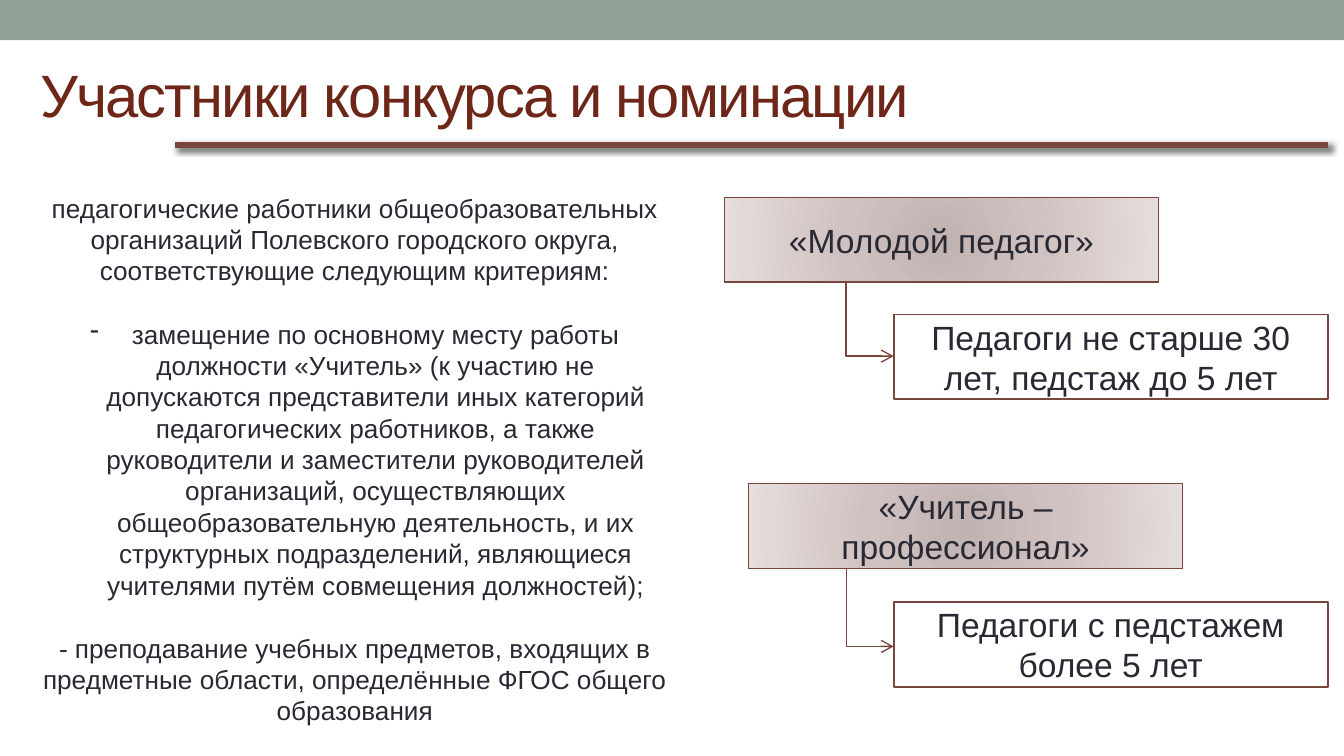
from dataclasses import dataclass

from lxml import etree
from pptx import Presentation
from pptx.dml.color import RGBColor
from pptx.enum.shapes import MSO_CONNECTOR as Conn, MSO_SHAPE as Shape
from pptx.enum.text import MSO_ANCHOR as Anchor, PP_ALIGN as Align
from pptx.oxml import parse_xml
from pptx.oxml.ns import nsdecls, qn
from pptx.util import Inches, Pt


@dataclass(frozen=True)
class Theme:
    font: str = "Arial"
    band: str = "93A299"
    title: str = "6E2619"
    line: str = "79463D"
    ink: str = "292934"
    paper: str = "FFFFFF"
    glow: tuple = ((0, "C0B3B1"), (45, "D0C2C0"), (100, "E5DEDD"))
    big: int = 32
    mid: int = 18
    small: int = 14


T = Theme()
WIDE = 10
BOX_W, BOX_H = 3.23, 0.63
INTRO = ("педагогические работники общеобразовательных организаций Полевского "
         "городского округа, соответствующие следующим критериям:")
POST = ("замещение по основному месту работы должности «Учитель» (к участию не "
        "допускаются представители иных категорий педагогических работников, а также "
        "руководители и заместители руководителей организаций, осуществляющих "
        "общеобразовательную деятельность, и их структурных подразделений, "
        "являющиеся учителями путём совмещения должностей);")
FIELD = ("- преподавание учебных предметов, входящих в предметные области, "
         "определённые ФГОС общего образования")


def rgb(code):
    return RGBColor.from_string(code)


def write(frame, text, size=T.small, color=T.ink, align=Align.CENTER,
          anchor=Anchor.MIDDLE, gap=0, track=0, bullet=None):
    """Fill the frame's first paragraph, or add one if it has text already."""
    frame.word_wrap = True
    frame.vertical_anchor = anchor
    para = frame.paragraphs[0]
    if para.runs:
        para = frame.add_paragraph()
    para.alignment = align
    para.space_before = Pt(gap)
    run = para.add_run()
    run.text = text
    font = run.font
    font.name, font.size, font.color.rgb = T.font, Pt(size), rgb(color)
    if track:
        run._r.get_or_add_rPr().set("spc", str(track * 100))
    if bullet:
        props = para._p.get_or_add_pPr()
        indent = Inches(0.31)
        props.set("marL", str(indent))
        props.set("indent", str(-indent))
        etree.SubElement(props, qn("a:buChar")).set("char", bullet)


def rect(slide, x, y, w, h, fill, line=None, width=1):
    box = slide.shapes.add_shape(
        Shape.RECTANGLE, Inches(x), Inches(y), Inches(w), Inches(h))
    box.shadow.inherit = False
    box.fill.solid()
    box.fill.fore_color.rgb = rgb(fill)
    if line:
        box.line.color.rgb = rgb(line)
        box.line.width = Pt(width)
    else:
        box.line.fill.background()
    return box


def glow(box):
    """Replace the plain fill with the round gradient."""
    stops = "".join(
        f'<a:gs pos="{pos * 1000}"><a:srgbClr val="{code}"/></a:gs>'
        for pos, code in T.glow)
    grad = parse_xml(
        f'<a:gradFill {nsdecls("a")} rotWithShape="1"><a:gsLst>{stops}</a:gsLst>'
        '<a:path path="circle"><a:fillToRect l="100000" t="100000" r="100000" '
        'b="100000"/></a:path></a:gradFill>')
    props = box._element.spPr
    props.replace(props.find(qn("a:solidFill")), grad)


def link(slide, kind, x1, y1, x2, y2, width):
    """Draw a connector and return it with its empty effect list."""
    line = slide.shapes.add_connector(
        kind, Inches(x1), Inches(y1), Inches(x2), Inches(y2))
    line.line.color.rgb = rgb(T.line)
    line.line.width = Pt(width)
    return line, etree.SubElement(line._element.spPr, qn("a:effectLst"))


def header(slide, x, y, w, h):
    rect(slide, 0, 0, WIDE, 0.3, T.band)
    box = slide.shapes.add_textbox(Inches(x), Inches(y), Inches(w), Inches(h))
    write(box.text_frame, "Участники конкурса и номинации", size=T.big,
          color=T.title, align=Align.LEFT, track=-1)
    base = y + h - 0.02
    _, effects = link(slide, Conn.STRAIGHT, x + 1.1, base, 9.88, base, 3.5)
    effects.append(parse_xml(
        f'<a:outerShdw {nsdecls("a")} blurRad="{Pt(3)}" dist="{Pt(2)}" '
        'dir="2700000" algn="tl" rotWithShape="0"><a:srgbClr val="000000">'
        '<a:alpha val="60000"/></a:srgbClr></a:outerShdw>'))


def rules(slide, x, y, w, h):
    box = slide.shapes.add_textbox(Inches(x), Inches(y), Inches(w), Inches(h))
    frame = box.text_frame
    write(frame, INTRO, anchor=Anchor.TOP)
    write(frame, POST, anchor=Anchor.TOP, gap=17)
    dash = frame.paragraphs[1]._p.get_or_add_pPr()
    indent = Inches(0.31)
    dash.set("marL", str(indent))
    dash.set("indent", str(-indent))
    etree.SubElement(dash, qn("a:buChar")).set("char", "-")
    write(frame, FIELD, anchor=Anchor.TOP, gap=17)


def award(slide, x, y, name, terms, drop, start, end):
    """Place a nomination box and, below right, the terms it points to."""
    top = rect(slide, x, y, BOX_W, BOX_H, T.glow[0][1], T.line, 0.75)
    glow(top)
    write(top.text_frame, name, size=T.mid)
    left = 6.65
    low = rect(slide, left, y + drop, BOX_W, BOX_H, T.paper, T.line)
    write(low.text_frame, terms, size=T.mid)
    arrow, _ = link(slide, Conn.ELBOW, start, y + BOX_H, left, y + end, 0.75)
    tail = etree.SubElement(arrow.line._get_or_add_ln(), qn("a:tailEnd"))
    tail.set("type", "arrow")


def main():
    deck = Presentation()
    deck.slide_width, deck.slide_height = Inches(WIDE), Inches(WIDE * 9 / 16)
    slide = deck.slides.add_slide(deck.slide_layouts[6])
    header(slide, 0.2, 0.29, 9, 0.81)
    rules(slide, 0.2, 1.38, 4.88, 4.11)
    award(slide, 5.39, 1.47, "«Молодой педагог»",
          "Педагоги не старше 30 лет, педстаж до 5 лет", 0.87, 5.94, 1.18)
    award(slide, 5.57, 3.6, "«Учитель – профессионал»",
          "Педагоги с педстажем более 5 лет", 0.88, 5.95, 1.21)
    deck.save("out.pptx")


if __name__ == "__main__":
    main()
